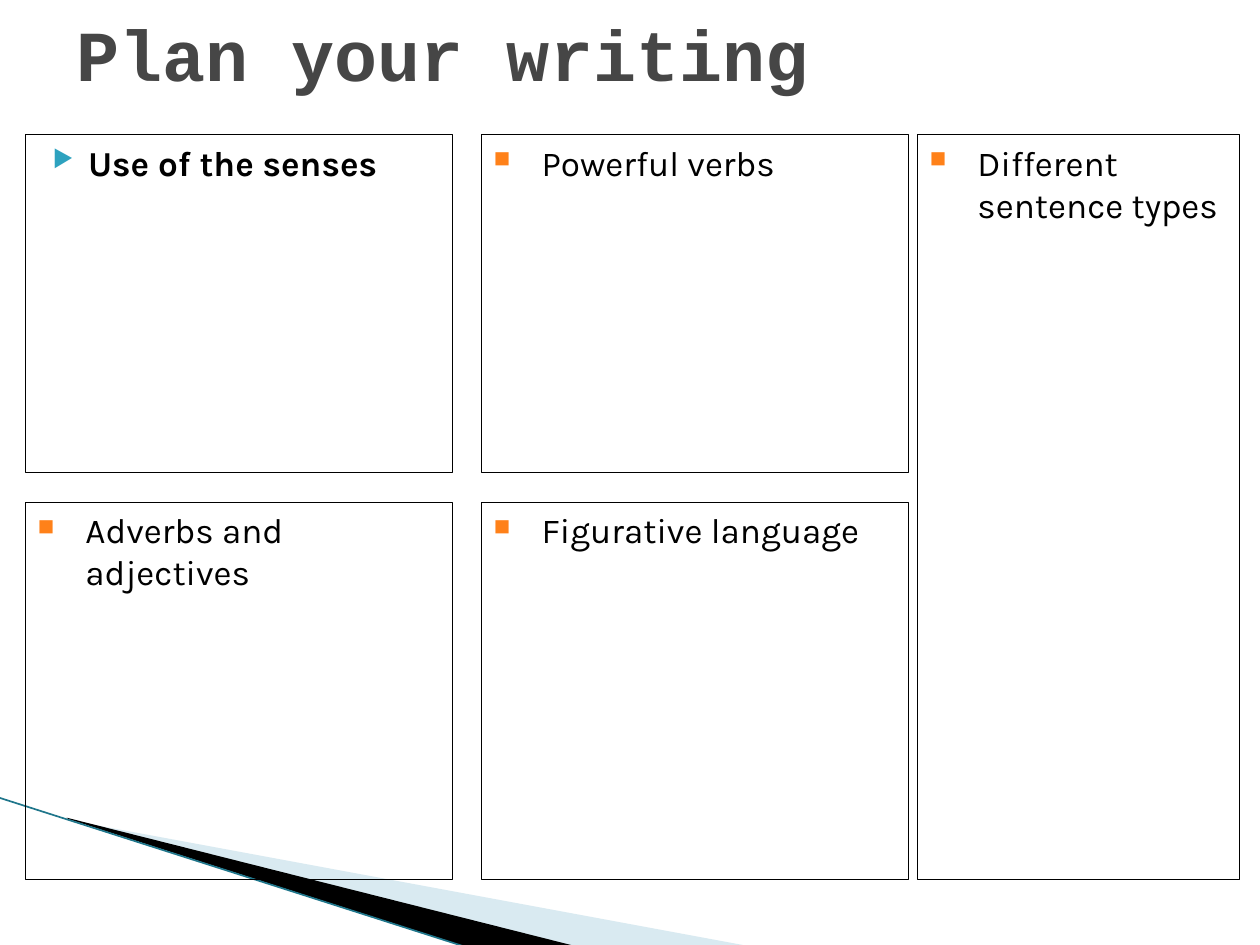
"""Build a writing-plan slide with five outlined prompt panels."""
from dataclasses import dataclass

import lxml.etree
import pptx
import pptx.dml.color
import pptx.enum.shapes
import pptx.enum.text
import pptx.oxml.ns
import pptx.util
from pptx.util import Inches

COLOURS = {
    "black": "000000",
    "title": "464646",
    "teal": "2DA2BF",
    "orange": "FF8119",
    "pale": "A0CBDC",
    "edge": "1F768B",
}


@dataclass(frozen=True)
class Bullet:
    character: str
    colour: str
    size: int
    margin: float
    indent: float


@dataclass(frozen=True)
class Panel:
    text: str
    left: float
    top: float
    width: float
    height: float
    bullet: Bullet
    bold: bool = False


@dataclass(frozen=True)
class Wedge:
    points: tuple[tuple[float, float], ...]
    colour: str
    opacity: int = 100


ARROW = Bullet("▶", "teal", 68, 0.4, -0.28)
SQUARE = Bullet("■", "orange", 65, 0.38, -0.38)
COLUMNS = (0.2, 3.82, 7.28)
ROWS = (1.07, 3.99)
WIDTH, SIDE_WIDTH = 3.39, 2.56
HEIGHTS = (2.68, 2.99)
SIDE_HEIGHT = ROWS[1] + HEIGHTS[1] - ROWS[0]

PANELS = (
    Panel("Use of the senses", COLUMNS[0], ROWS[0], WIDTH, HEIGHTS[0], ARROW, True),
    Panel("Powerful verbs", COLUMNS[1], ROWS[0], WIDTH, HEIGHTS[0], SQUARE),
    Panel("Adverbs and adjectives", COLUMNS[0], ROWS[1], WIDTH, HEIGHTS[1], SQUARE),
    Panel("Figurative language", COLUMNS[1], ROWS[1], WIDTH, HEIGHTS[1], SQUARE),
    Panel("Different sentence types", COLUMNS[2], ROWS[0], SIDE_WIDTH, SIDE_HEIGHT, SQUARE),
)
WEDGES = (
    Wedge(((0.55, 6.51), (5.95, 7.51), (4.56, 7.51), (0.55, 6.5)), "pale", 40),
    Wedge(((0.53, 6.49), (4.57, 7.51), (3.72, 7.52), (0.54, 6.5)), "black"),
)


def colour(name: str) -> pptx.dml.color.RGBColor:
    """Return the named palette colour."""
    return pptx.dml.color.RGBColor.from_string(COLOURS[name])


def add_element(parent, tag: str, **attributes: str):
    """Append a drawing element to its parent."""
    element = lxml.etree.SubElement(parent, pptx.oxml.ns.qn(tag))
    for name, value in attributes.items():
        element.set(name, value)
    return element


def set_font(paragraph, name: str, size: float, colour_name: str, bold: bool) -> None:
    """Set the font shared by a whole paragraph."""
    font = paragraph.font
    font.name = name
    font.size = pptx.util.Pt(size)
    font.bold = bold
    font.color.rgb = colour(colour_name)


def set_bullet(paragraph, bullet: Bullet) -> None:
    """Give a paragraph its hanging bullet."""
    properties = paragraph._p.get_or_add_pPr()
    properties.set("marL", str(Inches(bullet.margin)))
    properties.set("indent", str(Inches(bullet.indent)))
    bullet_colour = add_element(properties, "a:buClr")
    add_element(bullet_colour, "a:srgbClr", val=COLOURS[bullet.colour])
    add_element(properties, "a:buSzPct", val=str(bullet.size * 1000))
    add_element(properties, "a:buChar", char=bullet.character)


def add_wedge(slide, wedge: Wedge) -> None:
    """Draw one filled wedge of the corner decoration."""
    points = [(Inches(x), Inches(y)) for x, y in wedge.points]
    builder = slide.shapes.build_freeform(*points[0])
    builder.add_line_segments(points[1:], close=True)
    shape = builder.convert_to_shape()
    shape.shadow.inherit = False
    shape.line.fill.background()
    shape.fill.solid()
    shape.fill.fore_color.rgb = colour(wedge.colour)
    if wedge.opacity < 100:
        fill_colour = shape._element.spPr.find(".//" + pptx.oxml.ns.qn("a:srgbClr"))
        add_element(fill_colour, "a:alpha", val=str(wedge.opacity * 1000))


def add_edge(slide) -> None:
    """Draw the thin line along the corner decoration."""
    connector = slide.shapes.add_connector(
        pptx.enum.shapes.MSO_CONNECTOR.STRAIGHT,
        Inches(-0.01), Inches(6.33), Inches(3.71), Inches(7.52),
    )
    connector.line.color.rgb = colour("edge")
    connector.line.width = pptx.util.Pt(0.95)
    add_element(connector._element.spPr, "a:effectLst")


def add_title(slide, text: str) -> None:
    """Write the slide title."""
    shape = slide.shapes.add_textbox(Inches(0.51), Inches(0), Inches(9), Inches(0.84))
    frame = shape.text_frame
    frame.word_wrap = True
    frame.vertical_anchor = pptx.enum.text.MSO_ANCHOR.MIDDLE
    paragraph = frame.paragraphs[0]
    paragraph.text = text
    set_font(paragraph, "Courier New", 41, "title", True)


def add_panel(slide, panel: Panel) -> None:
    """Draw one outlined panel with its bulleted prompt."""
    shape = slide.shapes.add_shape(
        pptx.enum.shapes.MSO_SHAPE.RECTANGLE,
        Inches(panel.left), Inches(panel.top), Inches(panel.width), Inches(panel.height),
    )
    shape.shadow.inherit = False
    shape.fill.background()
    shape.line.color.rgb = colour("black")
    shape.line.width = pptx.util.Pt(0.75)
    frame = shape.text_frame
    frame.word_wrap = True
    frame.vertical_anchor = pptx.enum.text.MSO_ANCHOR.TOP
    paragraph = frame.paragraphs[0]
    paragraph.text = panel.text
    paragraph.alignment = pptx.enum.text.PP_ALIGN.LEFT
    set_bullet(paragraph, panel.bullet)
    set_font(paragraph, "Karla", 20, "black", panel.bold)


def main() -> None:
    """Build and save the presentation."""
    presentation = pptx.Presentation()
    presentation.slide_width = Inches(10)
    presentation.slide_height = Inches(7.5)
    slide = presentation.slides.add_slide(presentation.slide_layouts[6])
    for wedge in WEDGES:
        add_wedge(slide, wedge)
    add_edge(slide)
    add_title(slide, "Plan your writing")
    for panel in PANELS:
        add_panel(slide, panel)
    presentation.save("out.pptx")


if __name__ == "__main__":
    main()
